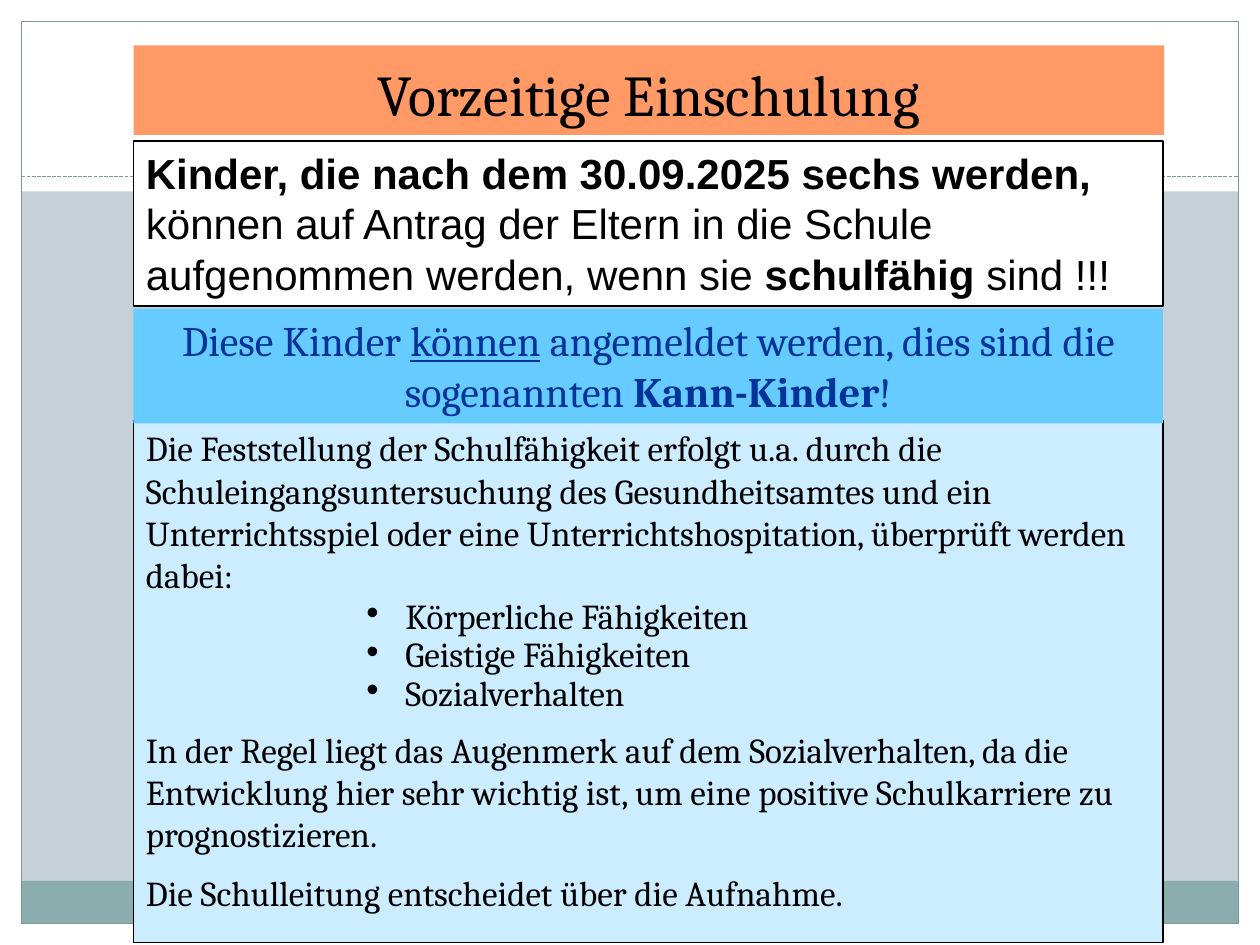
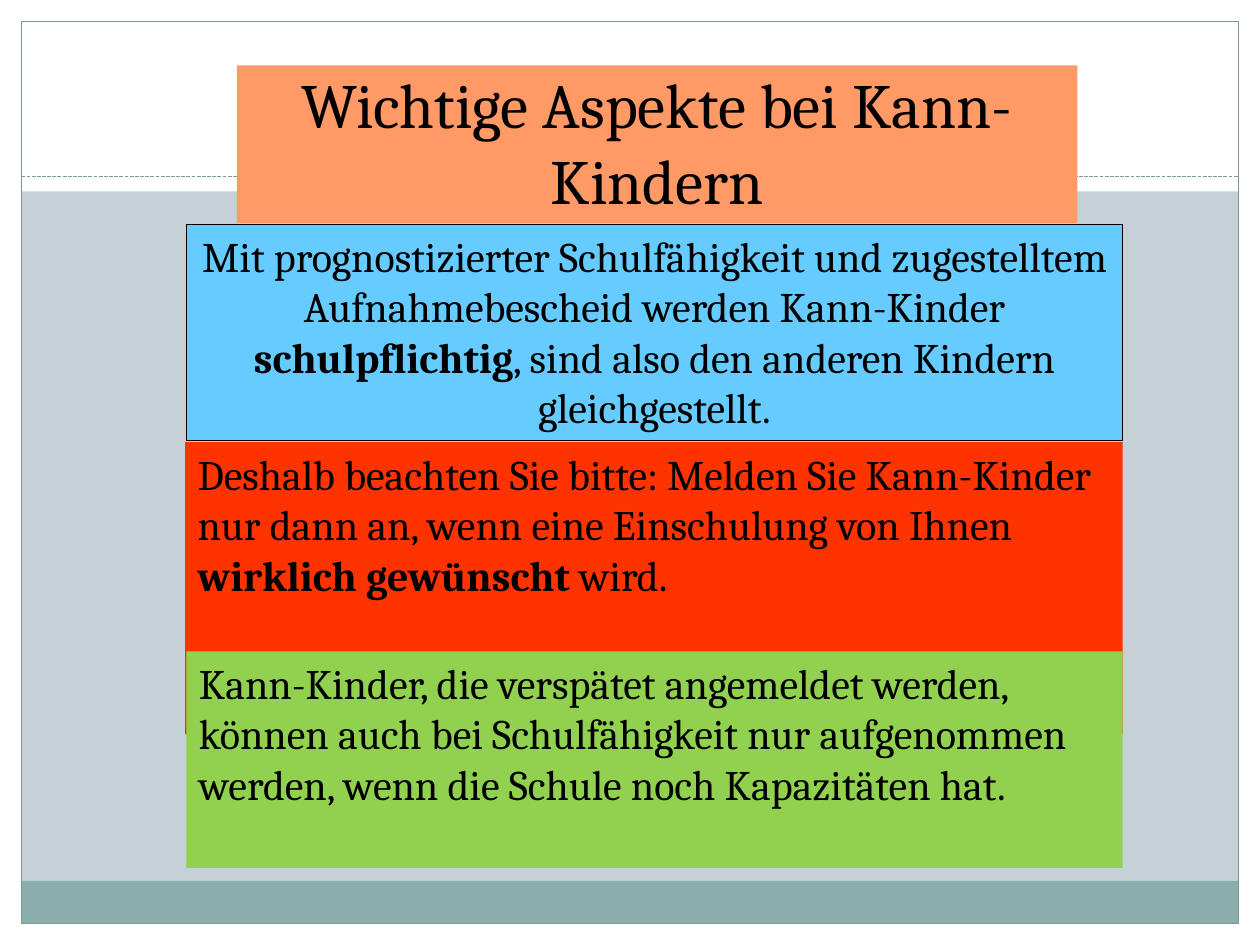
from lxml.etree import SubElement
from pptx import Presentation
from pptx.dml.color import RGBColor
from pptx.enum.dml import MSO_LINE
from pptx.enum.shapes import MSO_CONNECTOR, MSO_SHAPE
from pptx.enum.text import MSO_ANCHOR, MSO_AUTO_SIZE, PP_ALIGN
from pptx.oxml.ns import qn
from pptx.util import Inches, Pt

WIDTH, HEIGHT = Inches(10), Inches(7.5)
WHITE, BLACK, PAPER = "FFFFFF", "000000", "C5D1D7"
TEAL, RULE = "8CADAE", "7C999A"
ORANGE, SKY, PALE, NAVY = "FF9966", "66CCFF", "CCECFF", "003399"
RED, GREEN = "FF3300", "92D050"
SERIF, SANS = "Cambria", "Arial"
BOLD, UNDERLINE = {"bold": True}, {"underline": True}
LEFT, CENTER = PP_ALIGN.LEFT, PP_ALIGN.CENTER
EDGE_X, EDGE_Y = 1.7, 2.27


def rgb(value):
    """Turn a hex string into a colour."""
    return RGBColor.from_string(value)


def share(left, top, width, height):
    """Turn percentages of the slide's size into lengths."""
    return [int(side * part / 100) for side, part in
            zip((WIDTH, HEIGHT) * 2, (left, top, width, height))]


def paint(sp, fill=None, line=None):
    """Set the fill and outline of a shape."""
    if fill:
        sp.fill.solid()
        sp.fill.fore_color.rgb = rgb(fill)
    else:
        sp.fill.background()
    if line:
        sp.line.color.rgb = rgb(line)
        sp.line.width = Pt(0.75)
    else:
        sp.line.fill.background()


def add_rect(s, place, fill=None, line=None):
    """Add a flat rectangle."""
    sp = s.shapes.add_shape(MSO_SHAPE.RECTANGLE, *share(*place))
    sp.shadow.inherit = False
    paint(sp, fill, line)
    return sp


def add_rule(s, left, right, y):
    """Add a dashed horizontal rule."""
    x1, top, width, _ = share(left, y, right - left, 0)
    line = s.shapes.add_connector(MSO_CONNECTOR.STRAIGHT, x1, top, x1 + width, top)
    line.line.color.rgb = rgb(RULE)
    line.line.width = Pt(0.75)
    line.line.dash_style = MSO_LINE.SQUARE_DOT
    SubElement(line.element.spPr, qn("a:effectLst"))
    return line


def set_frame(tf, anchor):
    """Give a text frame its wrapping, insets and anchor."""
    values = {"word_wrap": True, "auto_size": MSO_AUTO_SIZE.NONE,
              "vertical_anchor": anchor,
              "margin_left": Inches(0.1), "margin_right": Inches(0.1),
              "margin_top": Inches(0.05), "margin_bottom": Inches(0.05)}
    for name, value in values.items():
        setattr(tf, name, value)


def write(p, runs, size, font=SERIF, color=BLACK, align=LEFT):
    """Fill a paragraph with plain strings and (text, format) pairs."""
    p.alignment = align
    for run in runs:
        text, extra = (run, {}) if isinstance(run, str) else run
        r = p.add_run()
        r.text = text
        r.font.color.rgb = rgb(color)
        for name, value in {"name": font, "size": Pt(size), **extra}.items():
            setattr(r.font, name, value)


def set_bullet(p):
    """Make a paragraph a tightly spaced, indented bullet."""
    p.line_spacing = 0.5
    pPr = p._p.get_or_add_pPr()
    pPr.set("marL", str(Inches(2.06)))
    pPr.set("indent", str(-Inches(0.31)))
    SubElement(pPr, qn("a:buFont"), typeface=SANS)
    SubElement(pPr, qn("a:buChar"), char="•")


def add_box(s, place, fill, paragraphs, line=None, bullets=(), size=24, **style):
    """Add a filled box of text, with the given paragraphs bulleted."""
    tf = add_rect(s, place, fill, line).text_frame
    set_frame(tf, MSO_ANCHOR.TOP)
    for i, runs in enumerate(paragraphs):
        p = tf.add_paragraph() if i else tf.paragraphs[0]
        if i:
            p.space_before = Pt(size / 2)
        write(p, runs, size, **style)
        if i in bullets:
            set_bullet(p)


def add_title(s, place, text, size):
    """Place and format the title."""
    sp = s.shapes.title
    sp.left, sp.top, sp.width, sp.height = share(*place)
    paint(sp, ORANGE)
    set_frame(sp.text_frame, MSO_ANCHOR.BOTTOM)
    write(sp.text_frame.paragraphs[0], [text], size, align=CENTER)


def decorate(layout, s):
    """Put the bands and frame on the layout, drawing them by way of a slide."""
    for ph in list(layout.placeholders)[1:]:
        ph.element.getparent().remove(ph.element)
    layout.background.fill.solid()
    layout.background.fill.fore_color.rgb = rgb(PAPER)
    inner_w, inner_h = 100 - 2 * EDGE_X, 100 - 2 * EDGE_Y
    bands = [((0, 100 - EDGE_Y, 100, EDGE_Y), WHITE),
             ((0, 0, 100, 20.27), WHITE),
             ((0, 0, EDGE_X, 100), WHITE),
             ((100 - EDGE_X, 0, EDGE_X, 100), WHITE),
             ((EDGE_X, 93.2, inner_w, 4.53), TEAL)]
    parts = [add_rect(s, place, fill) for place, fill in bands]
    parts.append(add_rect(s, (EDGE_X, EDGE_Y, inner_w, inner_h), line=RULE))
    parts.append(add_rule(s, EDGE_X, 100 - EDGE_X, 18.67))
    for i, part in enumerate(parts, 2):
        layout.shapes.element.insert(i, part.element)


def build_early_enrolment(s):
    """Fill the slide on early enrolment."""
    left, width = 10.6, 81.7
    add_title(s, (left, 4.8, 81.8, 9.47), "Vorzeitige Einschulung", 33)
    add_box(s, (left, 14.93, width, 17.47), WHITE, [[
        ("Kinder, die nach dem 30.09.2025 sechs werden, ", BOLD),
        "können auf Antrag der Eltern in die Schule aufgenommen werden, wenn sie ",
        ("schulfähig", BOLD), " sind !!!"]], BLACK, font=SANS)
    add_box(s, (left, 44.53, width, 55.2), PALE, [
        ["Die Feststellung der Schulfähigkeit erfolgt u.a. durch die "
         "Schuleingangsuntersuchung des Gesundheitsamtes und ein Unterrichtsspiel "
         "oder eine Unterrichtshospitation, überprüft werden dabei:"],
        ["Körperliche Fähigkeiten"],
        ["Geistige Fähigkeiten"],
        ["Sozialverhalten"],
        ["In der Regel liegt das Augenmerk auf dem Sozialverhalten, da die "
         "Entwicklung hier sehr wichtig ist, um eine positive Schulkarriere zu "
         "prognostizieren."],
        ["Die Schulleitung entscheidet über die Aufnahme."]],
        BLACK, bullets=(1, 2, 3), size=20)
    add_box(s, (left, 32.67, width, 12.13), SKY, [[
        "Diese Kinder ", ("können", UNDERLINE),
        " angemeldet werden, dies sind die sogenannten ",
        ("Kann-Kinder", BOLD), "!"]], color=NAVY, align=CENTER)


def build_key_aspects(s):
    """Fill the slide on what matters for optional starters."""
    left, width, height = 14.8, 74.3, 22.93
    add_title(s, (18.8, 6.93, 66.7, 16.67), "Wichtige Aspekte bei Kann-Kindern", 36)
    add_box(s, (left, 23.73, width, height), SKY, [[
        "Mit prognostizierter Schulfähigkeit und zugestelltem Aufnahmebescheid "
        "werden Kann-Kinder ", ("schulpflichtig", BOLD),
        ", sind also den anderen Kindern gleichgestellt."]], BLACK, align=CENTER)
    add_box(s, (14.7, 46.8, 74.4, 30.93), RED, [[
        "Deshalb beachten Sie bitte: Melden Sie Kann-Kinder nur dann an, wenn eine "
        "Einschulung von Ihnen ", ("wirklich gewünscht", BOLD), " wird."]])
    add_box(s, (left, 68.93, width, height), GREEN, [[
        "Kann-Kinder, die verspätet angemeldet werden, können auch bei "
        "Schulfähigkeit nur aufgenommen werden, wenn die Schule noch Kapazitäten "
        "hat."]])


def main():
    """Build and save the presentation."""
    prs = Presentation()
    prs.slide_width, prs.slide_height = WIDTH, HEIGHT
    layout = prs.slide_layouts[5]
    builders = (build_early_enrolment, build_key_aspects)
    slides = [prs.slides.add_slide(layout) for _ in builders]
    decorate(layout, slides[0])
    for build, s in zip(builders, slides):
        build(s)
    prs.save("out.pptx")


if __name__ == "__main__":
    main()
